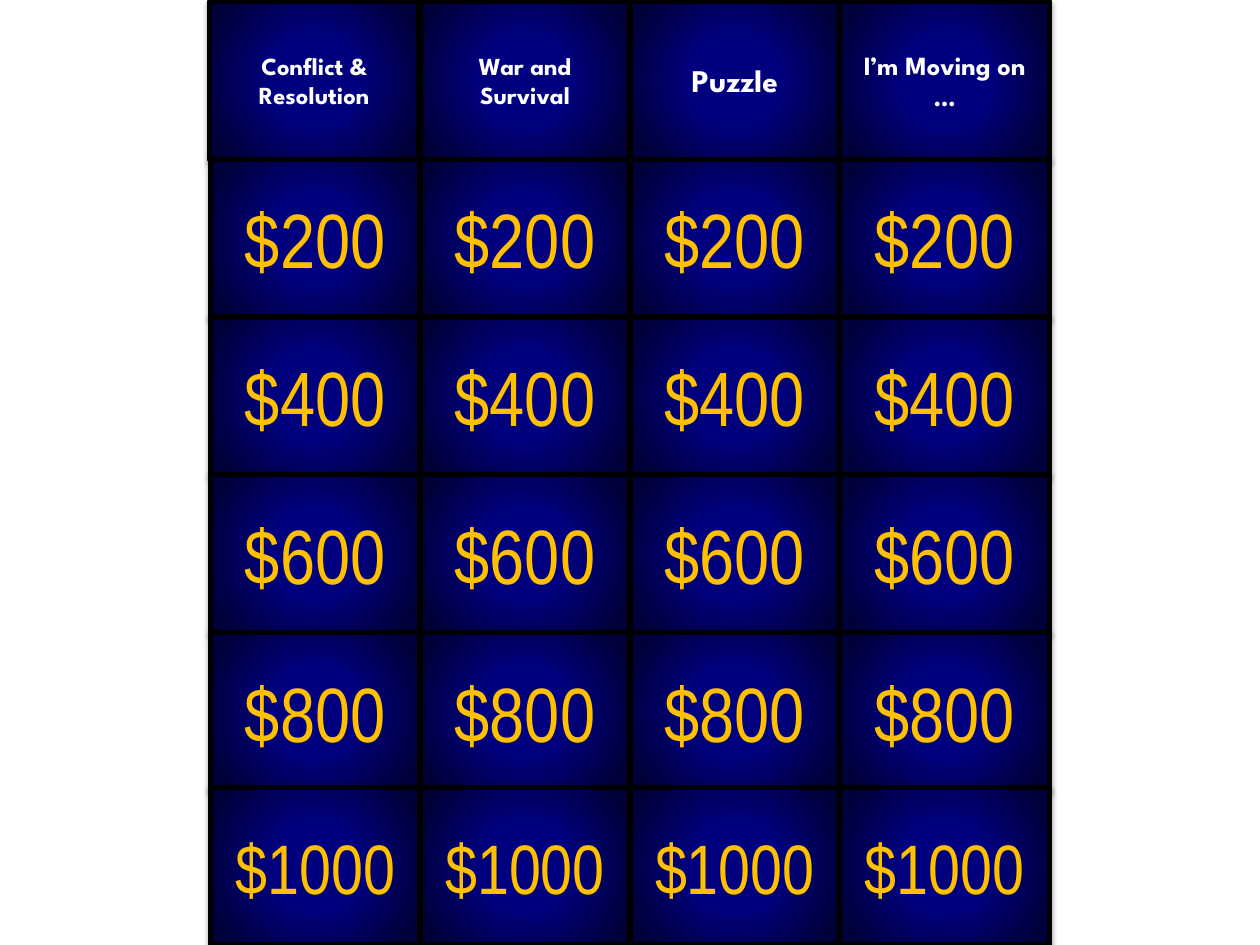
"""Build a quiz board of four categories with five dollar values each."""
from dataclasses import dataclass

from lxml import etree
from pptx import Presentation
from pptx import util as u
from pptx.dml.color import RGBColor
from pptx.enum import shapes, text
from pptx.oxml import parse_xml
from pptx.oxml.ns import nsdecls, qn
from pptx.slide import Slide

WHITE = RGBColor(0xFF, 0xFF, 0xFF)
GOLD = RGBColor(0xFF, 0xC0, 0x00)
BLACK = RGBColor(0x00, 0x00, 0x00)
BLUE = RGBColor(0x00, 0x00, 0x7F)
NAVY = RGBColor(0x00, 0x00, 0x3A)

PAGE_WIDTH, PAGE_HEIGHT = 25.4, 19.05
BOARD_LEFT, BOARD_TOP = 4.24, 0.03
TILE_WIDTH, TILE_HEIGHT = 4.23, 3.18

RADIAL_PATH = (
    f'<a:path {nsdecls("a")} path="circle">'
    '<a:fillToRect l="50000" t="50000" r="50000" b="50000"/></a:path>'
)
TILE_SHADOW = (
    f'<a:outerShdw {nsdecls("a")} blurRad="40000" dist="23000" dir="5400000" rotWithShape="0">'
    '<a:srgbClr val="000000"><a:alpha val="35000"/></a:srgbClr></a:outerShdw>'
)


@dataclass(frozen=True)
class Category:
    name: str
    size: int
    column: int
    shift: float = 0


@dataclass(frozen=True)
class Style:
    font: str
    size: int
    color: RGBColor
    bold: bool = False


CATEGORIES = (
    Category("War and Survival", 14, 1),
    Category("Puzzle", 18, 2),
    Category("I’m Moving on …", 15, 3),
    Category("Conflict & Resolution", 14, 0, shift=-0.02),
)
VALUES = (200, 400, 600, 800, 1000)


def fill_radial(box) -> None:
    box.fill.gradient()
    stops = box.fill.gradient_stops
    for stop, position, color in zip(stops, (0.33, 0.87), (BLUE, NAVY)):
        stop.position = position
        stop.color.rgb = color
    gradient: etree.ElementBase = box.element.spPr.find(qn("a:gradFill"))
    gradient.replace(gradient.find(qn("a:lin")), parse_xml(RADIAL_PATH))


def add_tile(page: Slide, label: str, left: float, row: int, style: Style) -> None:
    top = min(BOARD_TOP + row * TILE_HEIGHT, PAGE_HEIGHT - TILE_HEIGHT)
    box = page.shapes.add_shape(
        shapes.MSO_SHAPE.RECTANGLE,
        u.Cm(left), u.Cm(top), u.Cm(TILE_WIDTH), u.Cm(TILE_HEIGHT),
    )
    fill_radial(box)
    box.line.color.rgb = BLACK
    box.line.width = u.Pt(3)
    box.shadow.inherit = False
    box.element.spPr.find(qn("a:effectLst")).append(parse_xml(TILE_SHADOW))

    frame = box.text_frame
    frame.text = label
    frame.word_wrap = True
    frame.vertical_anchor = text.MSO_ANCHOR.MIDDLE
    para = frame.paragraphs[0]
    para.alignment = text.PP_ALIGN.CENTER
    for span in para.runs:
        span.font.name = style.font
        span.font.size = u.Pt(style.size)
        span.font.bold = style.bold
        span.font.color.rgb = style.color


def main() -> None:
    deck = Presentation()
    deck.slide_width, deck.slide_height = u.Cm(PAGE_WIDTH), u.Cm(PAGE_HEIGHT)
    page = deck.slides.add_slide(deck.slide_layouts[6])

    for category in CATEGORIES:
        left = BOARD_LEFT + category.column * TILE_WIDTH + category.shift
        style = Style("League Spartan", category.size, WHITE, bold=True)
        add_tile(page, category.name, left, 0, style)

    for row, value in enumerate(VALUES, start=1):
        style = Style("Arial Narrow", 44 if value < 1000 else 40, GOLD)
        for category in CATEGORIES:
            left = BOARD_LEFT + category.column * TILE_WIDTH
            add_tile(page, f"${value}", left, row, style)

    deck.save("out.pptx")


if __name__ == "__main__":
    main()
